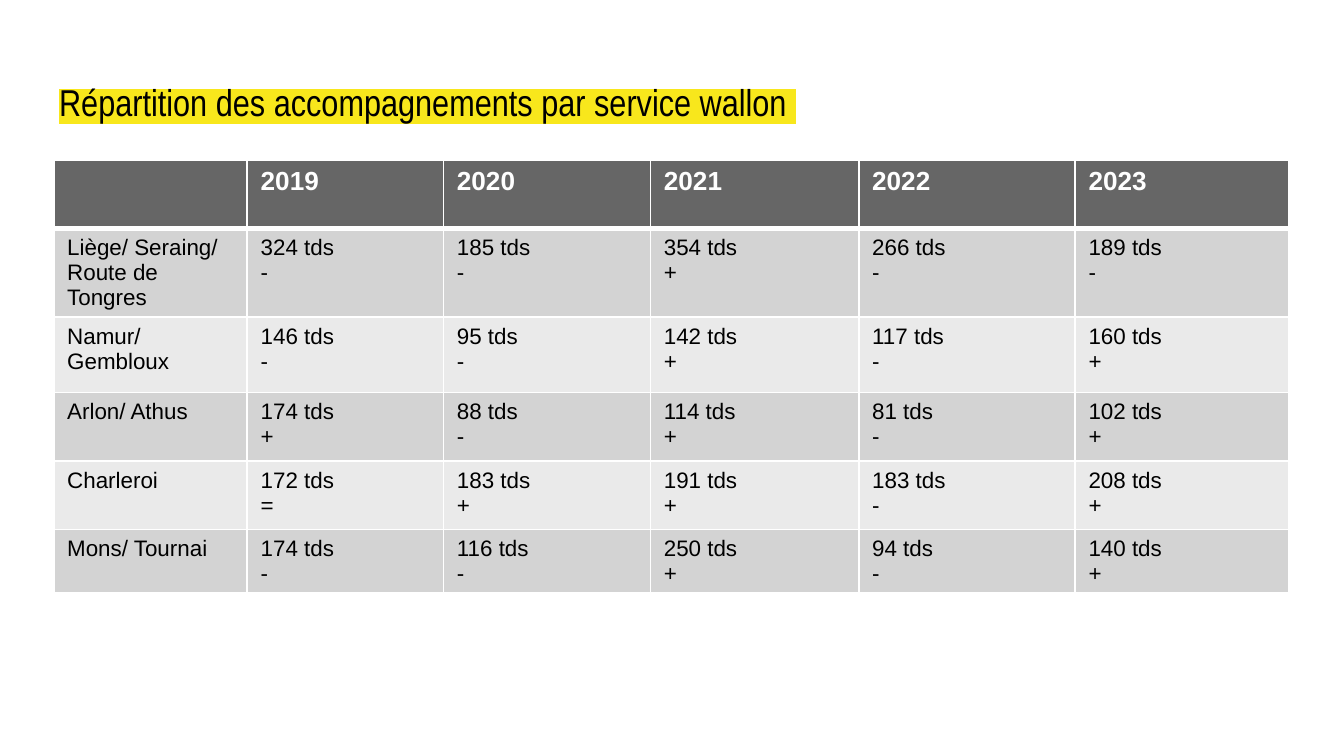
from lxml import etree
from pptx import Presentation
from pptx.dml.color import RGBColor
from pptx.enum.text import MSO_ANCHOR, PP_ALIGN
from pptx.oxml.ns import qn
from pptx.util import Inches, Pt

MIDDLE = MSO_ANCHOR.MIDDLE
LEFT = PP_ALIGN.LEFT
HEADER_FILL = "666666"
BAND_FILLS = ["D3D3D3", "EAEAEA"]
HIGHLIGHT = "F8E71C"
WHITE = "FFFFFF"


def color(value):
    return RGBColor.from_string(value)


def write(frame, text, size=12, font="Arial", ink="000000", bold=False):
    frame.text = text
    for para in frame.paragraphs:
        para.alignment = LEFT
        for span in para.runs:
            span.font.size = Pt(size)
            span.font.name = font
            span.font.bold = bold
            span.font.color.rgb = color(ink)


deck = Presentation()
deck.slide_width = Inches(10)
deck.slide_height = Inches(10 * 9 / 16)
page = deck.slides.add_slide(deck.slide_layouts[5])

title = page.shapes.title
title.left, title.top = Inches(0.34), Inches(0.49)
title.width, title.height = Inches(9.32), Inches(0.63)
frame = title.text_frame
frame.margin_left = frame.margin_right = Inches(0.1)
frame.margin_top, frame.margin_bottom = Inches(0.1), Inches(0.14)
frame.vertical_anchor = MIDDLE
frame.word_wrap = True
write(frame, "Répartition des accompagnements par service wallon ",
      size=20, font="Arial Narrow")
para = frame.paragraphs[0]
para.line_spacing = 0.82
ink_fill = para.runs[0].font._element.find(qn("a:solidFill"))
highlight = etree.Element(qn("a:highlight"))
etree.SubElement(highlight, qn("a:srgbClr"), val=HIGHLIGHT)
ink_fill.addnext(highlight)

years = ["", "2019", "2020", "2021", "2022", "2023"]
services = [
    ("Liège/ Seraing/\nRoute de\nTongres", "324 -", "185 -", "354 +", "266 -", "189 -"),
    ("Namur/\nGembloux", "146 -", "95 -", "142 +", "117 -", "160 +"),
    ("Arlon/ Athus", "174 +", "88 -", "114 +", "81 -", "102 +"),
    ("Charleroi", "172 =", "183 +", "191 +", "183 -", "208 +"),
    ("Mons/ Tournai", "174 -", "116 -", "250 +", "94 -", "140 +"),
]
column_widths = [1.44, 1.46, 1.54, 1.55, 1.61, 1.59]
row_heights = [0.51, 0.66, 0.56, 0.51, 0.51, 0.47]

table = page.shapes.add_table(
    len(row_heights), len(column_widths), Inches(0.4), Inches(1.19),
    Inches(sum(column_widths)), Inches(sum(row_heights))).table
for column, width in zip(table.columns, column_widths):
    column.width = Inches(width)
for row, height in zip(table.rows, row_heights):
    row.height = Inches(height)

for cell, year in zip(table.rows[0].cells, years):
    cell.fill.solid()
    cell.fill.fore_color.rgb = color(HEADER_FILL)
    write(cell.text_frame, year, size=14, ink=WHITE, bold=True)
    border = etree.Element(qn("a:lnB"), w=str(Pt(3)))
    border_fill = etree.SubElement(border, qn("a:solidFill"))
    etree.SubElement(border_fill, qn("a:srgbClr"), val=WHITE)
    cell._tc.get_or_add_tcPr().insert(0, border)

for index, (service, *counts) in enumerate(services):
    texts = [service] + [count.replace(" ", " tds\n") for count in counts]
    for cell, text in zip(table.rows[index + 1].cells, texts):
        cell.fill.solid()
        cell.fill.fore_color.rgb = color(BAND_FILLS[index % 2])
        write(cell.text_frame, text)

deck.save("out.pptx")
